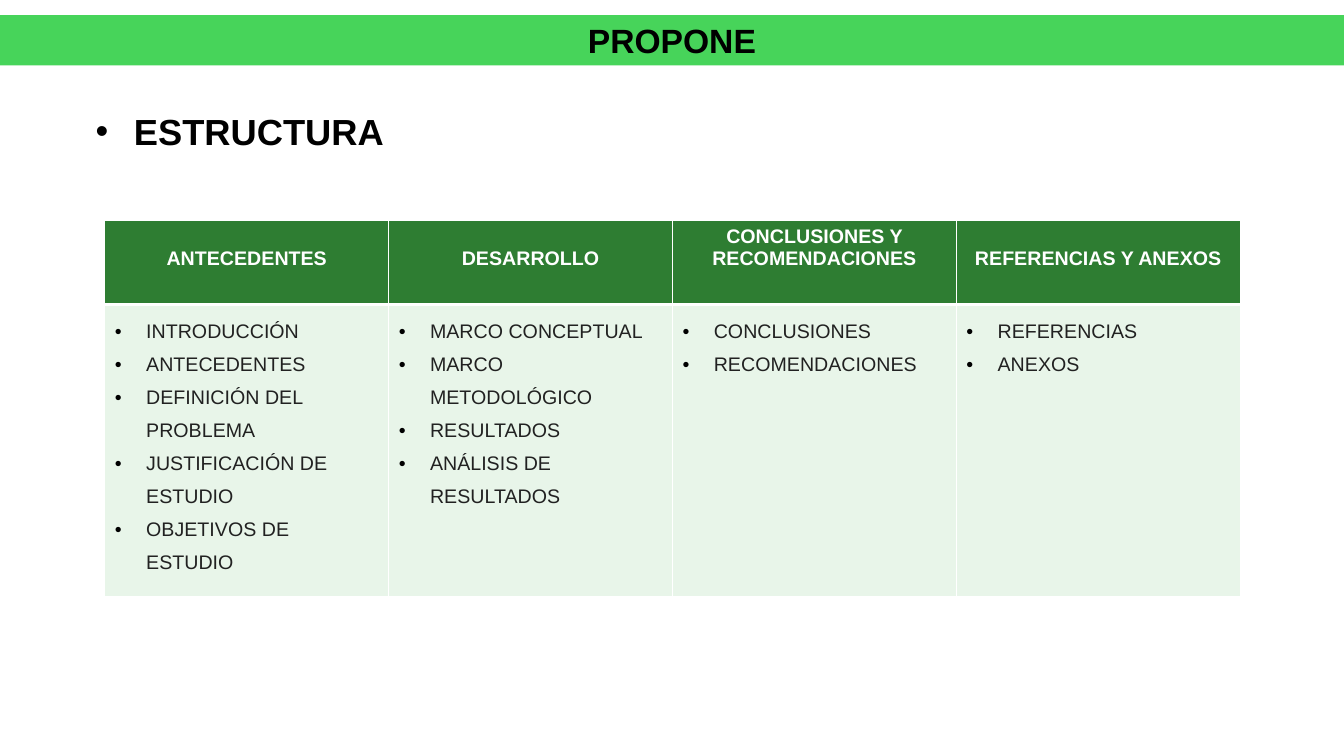
from dataclasses import dataclass

from lxml import etree
from pptx import Presentation, util as u
from pptx.dml.color import RGBColor
from pptx.enum import shapes, text
from pptx.oxml import ns


@dataclass(frozen=True)
class Theme:
    font: str = "Arial"
    banner: str = "47D45A"
    header: str = "2E7D32"
    body: str = "E8F5E9"
    black: str = "000000"
    white: str = "FFFFFF"
    ink: str = "212121"
    banner_size: float = 24
    heading_size: float = 25.9
    table_size: float = 14


THEME = Theme()

SECTIONS = {
    "ANTECEDENTES": [
        "INTRODUCCIÓN",
        "ANTECEDENTES",
        "DEFINICIÓN DEL PROBLEMA",
        "JUSTIFICACIÓN DE ESTUDIO",
        "OBJETIVOS DE ESTUDIO",
    ],
    "DESARROLLO": [
        "MARCO CONCEPTUAL",
        "MARCO METODOLÓGICO",
        "RESULTADOS",
        "ANÁLISIS DE RESULTADOS",
    ],
    "CONCLUSIONES Y RECOMENDACIONES": ["CONCLUSIONES", "RECOMENDACIONES"],
    "REFERENCIAS Y ANEXOS": ["REFERENCIAS", "ANEXOS"],
}


def add_element(parent, tag, **attributes):
    return etree.SubElement(parent, ns.qn(tag), attributes)


def style(paragraph, size, color, bold=False):
    font = paragraph.font
    font.name = THEME.font
    font.size = u.Pt(size)
    font.bold = bold
    font.color.rgb = RGBColor.from_string(color)


def add_bullet(paragraph, margin, indent):
    properties = paragraph._p.get_or_add_pPr()
    properties.set("marL", str(u.Inches(margin)))
    properties.set("indent", str(u.Inches(indent)))
    bullet_color = add_element(properties, "a:buClr")
    add_element(bullet_color, "a:srgbClr", val=THEME.black)
    add_element(properties, "a:buFont", typeface=THEME.font)
    add_element(properties, "a:buChar", char="•")


def set_borders(cell, top, bottom):
    properties = cell._tc.get_or_add_tcPr()
    widths = {"a:lnL": 1, "a:lnR": 1, "a:lnT": top, "a:lnB": bottom}
    for tag, width in widths.items():
        border = add_element(properties, tag, w=str(u.Pt(width)))
        fill = add_element(border, "a:solidFill")
        add_element(fill, "a:srgbClr", val=THEME.white)


def paint(cell, color):
    cell.fill.solid()
    cell.fill.fore_color.rgb = RGBColor.from_string(color)


def add_banner(slide, left, top, width, height):
    banner = slide.shapes.add_shape(
        shapes.MSO_SHAPE.RECTANGLE,
        u.Inches(left), u.Inches(top), u.Inches(width), u.Inches(height),
    )
    banner.shadow.inherit = False
    banner.fill.solid()
    banner.fill.fore_color.rgb = RGBColor.from_string(THEME.banner)
    banner.line.fill.background()
    banner.text_frame.vertical_anchor = text.MSO_ANCHOR.MIDDLE
    title = banner.text_frame.paragraphs[0]
    title.text = "PROPONE"
    title.alignment = text.PP_ALIGN.CENTER
    style(title, THEME.banner_size, THEME.black, bold=True)


def add_heading(slide, left, top, width, height):
    frame = slide.shapes.add_textbox(
        u.Inches(left), u.Inches(top), u.Inches(width), u.Inches(height)
    ).text_frame
    frame.word_wrap = True
    heading = frame.paragraphs[0]
    heading.text = "ESTRUCTURA"
    heading.line_spacing = 0.8
    heading.space_before = u.Pt(10)
    add_bullet(heading, 0.5, -0.38)
    style(heading, THEME.heading_size, THEME.black, bold=True)


def fill_header(cell, section):
    one_line = len(section) <= 20
    cell.margin_top = u.Inches(0.27 if one_line else 0.05)
    set_borders(cell, top=1, bottom=3)
    paint(cell, THEME.header)
    title = cell.text_frame.paragraphs[0]
    title.text = section
    title.alignment = text.PP_ALIGN.CENTER
    style(title, THEME.table_size, THEME.white, bold=True)


def fill_topics(cell, topics):
    set_borders(cell, top=3, bottom=1)
    paint(cell, THEME.body)
    cell.text = "\n".join(topics)
    for topic in cell.text_frame.paragraphs:
        topic.line_spacing = 1.5
        add_bullet(topic, 0.31, -0.31)
        style(topic, THEME.table_size, THEME.ink)


def add_structure(slide, left, top, width, height):
    table = slide.shapes.add_table(
        2, len(SECTIONS),
        u.Inches(left), u.Inches(top), u.Inches(width), u.Inches(height),
    ).table
    header_height = 0.83
    table.rows[0].height = u.Inches(header_height)
    table.rows[1].height = u.Inches(height - header_height)
    for column, (section, topics) in enumerate(SECTIONS.items()):
        fill_header(table.cell(0, column), section)
        fill_topics(table.cell(1, column), topics)


def main():
    deck = Presentation()
    deck.slide_width = u.Inches(13.33)
    deck.slide_height = u.Inches(7.5)
    slide = deck.slides.add_slide(deck.slide_layouts[6])
    add_heading(slide, 0.73, 1.12, 3.52, 0.61)
    add_structure(slide, 1.04, 2.19, 11.26, 3.7)
    add_banner(slide, 0, 0.15, 13.33, 0.5)
    deck.save("out.pptx")


if __name__ == "__main__":
    main()
